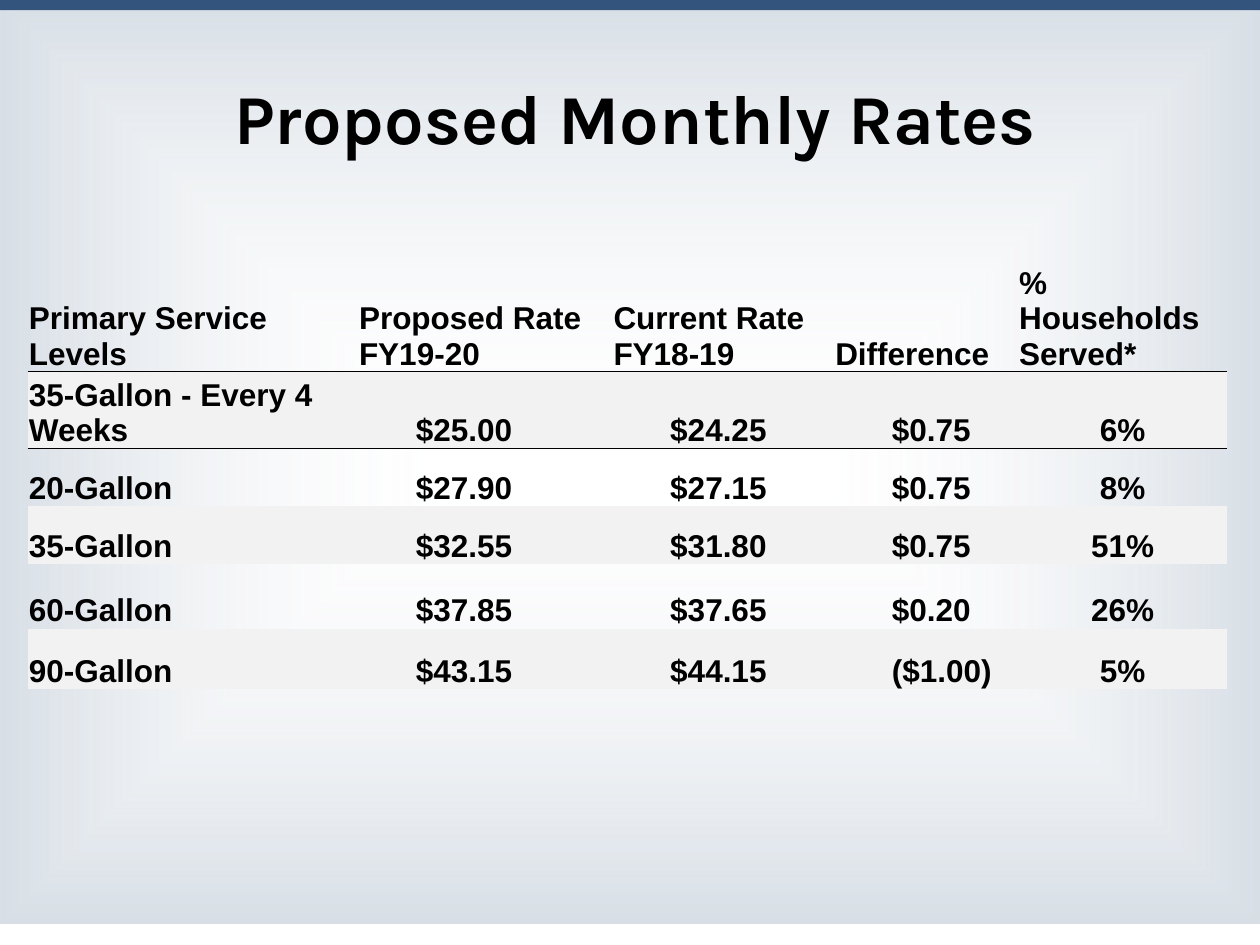
import lxml.etree
import pptx
import pptx.dml.color
import pptx.enum.shapes
import pptx.enum.text
import pptx.oxml
import pptx.oxml.ns
import pptx.util

Inches = pptx.util.Inches
Pt = pptx.util.Pt
RGBColor = pptx.dml.color.RGBColor
Anchor = pptx.enum.text.MSO_ANCHOR
Align = pptx.enum.text.PP_ALIGN

BLACK = RGBColor(0x00, 0x00, 0x00)
WHITE = RGBColor(0xFF, 0xFF, 0xFF)
MIST = RGBColor(0xCC, 0xD5, 0xDE)
NAVY = RGBColor(0x33, 0x55, 0x7D)
BAND = RGBColor(0xF2, 0xF2, 0xF2)

HEADINGS = [
    "Primary Service Levels",
    "Proposed Rate FY19-20",
    "Current Rate\nFY18-19",
    "Difference",
    "% Households Served*",
]
RATES = [
    ["35-Gallon - Every 4 Weeks", "$25.00", "$24.25", "$0.75", "6%"],
    ["20-Gallon", "$27.90", "$27.15", "$0.75", "8%"],
    ["35-Gallon", "$32.55", "$31.80", "$0.75", "51%"],
    ["60-Gallon", "$37.85", "$37.65", "$0.20", "26%"],
    ["90-Gallon", "$43.15", "$44.15", "($1.00)", "5%"],
]
COLUMN_WIDTHS = [2.62, 2.02, 1.76, 1.46, 1.66]
ROW_HEIGHTS = [0.91, 0.61, 0.46, 0.46, 0.51, 0.48]
AMOUNT_COLUMNS = (1, 2, 3)
SHARE_COLUMN = 4
NO_STYLE = "{2D5ABB26-0587-4C30-8999-92F81FD0307C}"
NS = pptx.oxml.ns.nsdecls("a")


class RateSlide:
    title_font = "Karla"
    title_size = Pt(40)
    table_font = "Arial"
    table_size = Pt(18)

    def __init__(self, deck):
        self.slide = deck.slides.add_slide(deck.slide_layouts[5])

    def style_text(self, frame, name, size, alignment):
        for paragraph in frame.paragraphs:
            paragraph.alignment = alignment
            for run in paragraph.runs:
                run.font.name = name
                run.font.size = size
                run.font.bold = True
                run.font.color.rgb = BLACK

    def panel(self, height, color):
        panel = self.slide.shapes.add_shape(
            pptx.enum.shapes.MSO_SHAPE.RECTANGLE, 0, 0, Inches(10), Inches(height))
        panel.shadow.inherit = False
        panel.fill.solid()
        panel.fill.fore_color.rgb = color
        panel.line.fill.background()
        return panel

    def glow(self, height, center, edge):
        panel = self.panel(height, edge)
        solid = panel.element.spPr.find(pptx.oxml.ns.qn("a:solidFill"))
        gradient = pptx.oxml.parse_xml(
            f'<a:gradFill {NS} rotWithShape="1"><a:gsLst>'
            f'<a:gs pos="0"><a:srgbClr val="{center}"><a:alpha val="4000"/></a:srgbClr></a:gs>'
            f'<a:gs pos="100000"><a:srgbClr val="{edge}"><a:alpha val="77000"/></a:srgbClr></a:gs>'
            '</a:gsLst><a:path path="rect">'
            '<a:fillToRect l="50000" t="50000" r="50000" b="50000"/></a:path></a:gradFill>')
        solid.getparent().replace(solid, gradient)

    def title(self, text, left, top, width, height):
        title = self.slide.shapes.title
        title.left, title.top = Inches(left), Inches(top)
        title.width, title.height = Inches(width), Inches(height)
        frame = title.text_frame
        frame.text = text
        frame.auto_size = pptx.enum.text.MSO_AUTO_SIZE.NONE
        frame.vertical_anchor = Anchor.MIDDLE
        self.style_text(frame, self.title_font, self.title_size, Align.CENTER)
        title.element.getparent().append(title.element)

    def border(self, cell, side):
        cell._tc.get_or_add_tcPr().append(pptx.oxml.parse_xml(
            f'<a:{side} {NS} w="12700"><a:solidFill><a:srgbClr val="{BLACK}"/>'
            f'</a:solidFill></a:{side}>'))

    def cell(self, cell, text, row, column):
        is_amount = row > 0 and column in AMOUNT_COLUMNS
        is_share = row > 0 and column == SHARE_COLUMN
        cell.text_frame.text = text
        cell.vertical_anchor = Anchor.BOTTOM
        cell.margin_left = Inches(0.46 if is_amount else 0.01)
        cell.margin_top = cell.margin_right = Inches(0.01)
        cell.margin_bottom = 0
        self.style_text(cell.text_frame, self.table_font, self.table_size,
                        Align.CENTER if is_share else Align.LEFT)
        if row < 2:
            self.border(cell, "lnT" if row else "lnB")
        if row % 2:
            cell.fill.solid()
            cell.fill.fore_color.rgb = BAND
        else:
            cell.fill.background()

    def table(self, rows, left, top):
        frame = self.slide.shapes.add_table(
            len(rows), len(COLUMN_WIDTHS), Inches(left), Inches(top),
            Inches(sum(COLUMN_WIDTHS)), Inches(sum(ROW_HEIGHTS)))
        rates = frame.table
        rates.first_row = rates.horz_banding = False
        rates._tbl.tblPr.find(pptx.oxml.ns.qn("a:tableStyleId")).text = NO_STYLE
        for column, width in zip(rates.columns, COLUMN_WIDTHS):
            column.width = Inches(width)
        for row, height in zip(rates.rows, ROW_HEIGHTS):
            row.height = Inches(height)
        for r, values in enumerate(rows):
            for c, value in enumerate(values):
                self.cell(rates.cell(r, c), value, r, c)


def main():
    deck = pptx.Presentation()
    deck.slide_width, deck.slide_height = Inches(10), Inches(7.5)
    rates = RateSlide(deck)
    rates.glow(7.33, WHITE, MIST)
    rates.panel(0.08, NAVY)
    rates.title("Proposed Monthly Rates", 0.33, 0.3, 9.42, 1.25)
    rates.table([HEADINGS] + RATES, 0.22, 2.04)
    deck.save("out.pptx")


if __name__ == "__main__":
    main()
